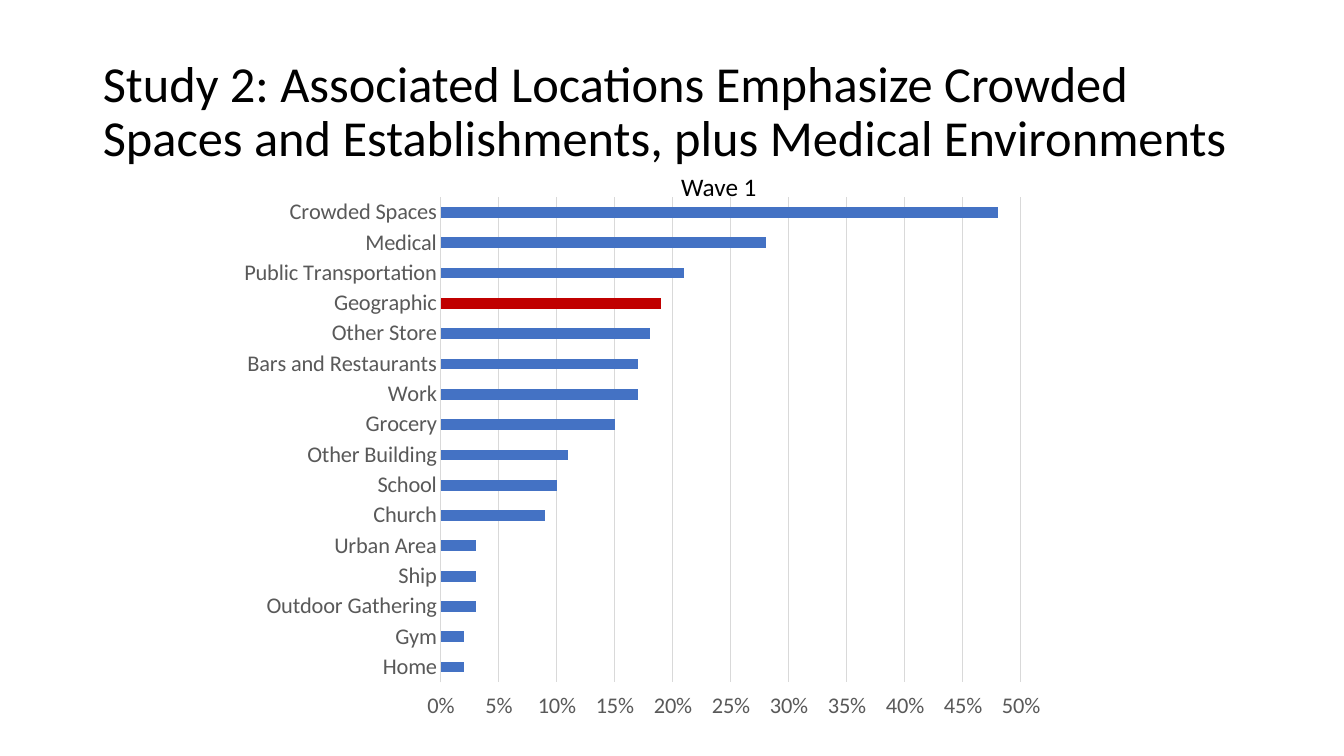
import pptx
import pptx.chart.data
import pptx.dml.color
import pptx.enum.chart
import pptx.enum.text
import pptx.oxml
import pptx.util
from pptx.util import Inches

COLORS = {"text": "000000", "axis": "595959", "grid": "D9D9D9",
          "bar": "4472C4", "highlight": "C00000"}
LOCATIONS = {
    "Crowded Spaces": 0.48, "Medical": 0.28, "Public Transportation": 0.21,
    "Geographic": 0.19, "Other Store": 0.18, "Bars and Restaurants": 0.17,
    "Work": 0.17, "Grocery": 0.15, "Other Building": 0.11, "School": 0.1,
    "Church": 0.09, "Urban Area": 0.03, "Ship": 0.03,
    "Outdoor Gathering": 0.03, "Gym": 0.02, "Home": 0.02,
}
PLOT_LAYOUT = {"x": 0.257, "y": 0.02, "w": 0.7, "h": 0.903}


def rgb(name):
    return pptx.dml.color.RGBColor.from_string(COLORS[name])


def format_font(font, size, color):
    values = {"name": "Calibri", "size": pptx.util.Pt(size), "bold": False}
    for attribute, value in values.items():
        setattr(font, attribute, value)
    font.color.rgb = rgb(color)


presentation = pptx.Presentation()
presentation.slide_width = Inches(13.33)
presentation.slide_height = Inches(7.5)
slide = presentation.slides.add_slide(presentation.slide_layouts[5])

# Title
title = slide.shapes.title
title.left, title.top = Inches(0.92), Inches(0.4)
title.width, title.height = Inches(11.5), Inches(1.45)
title_frame = title.text_frame
title_frame.text = ("Study 2: Associated Locations Emphasize Crowded Spaces "
                    "and Establishments, plus Medical Environments")
title_frame.word_wrap = True
title_frame.auto_size = pptx.enum.text.MSO_AUTO_SIZE.NONE
title_frame.vertical_anchor = pptx.enum.text.MSO_ANCHOR.MIDDLE
title_paragraph = title_frame.paragraphs[0]
title_paragraph.alignment = pptx.enum.text.PP_ALIGN.LEFT
title_paragraph.line_spacing = 0.9
format_font(title_paragraph.runs[0].font, 36, "text")

# Bar chart of locations
chart_data = pptx.chart.data.CategoryChartData(number_format="0%")
chart_data.categories = list(LOCATIONS)
chart_data.add_series("Series 1", list(LOCATIONS.values()))
chart = slide.shapes.add_chart(
    pptx.enum.chart.XL_CHART_TYPE.BAR_CLUSTERED, Inches(2.26), Inches(1.85),
    Inches(8.22), Inches(5.33), chart_data).chart
chart.has_legend = False
chart.has_title = False
format_font(chart.font, 16, "text")

plot = chart.plots[0]
plot.gap_width = 182
plot.vary_by_categories = False
series = plot.series[0]
highlight = series.points[list(LOCATIONS).index("Geographic")]
for bar, color in ((series, "bar"), (highlight, "highlight")):
    bar.format.fill.solid()
    bar.format.fill.fore_color.rgb = rgb(color)

# Axes: categories run downwards, percentages stay at the bottom
category_axis, value_axis = chart.category_axis, chart.value_axis
for axis in (category_axis, value_axis):
    axis.major_tick_mark = pptx.enum.chart.XL_TICK_MARK.NONE
    axis.minor_tick_mark = pptx.enum.chart.XL_TICK_MARK.NONE
    format_font(axis.tick_labels.font, 16, "axis")
category_axis.reverse_order = True
value_axis.tick_label_position = pptx.enum.chart.XL_TICK_LABEL_POSITION.HIGH
value_axis.minimum_scale = 0
value_axis.maximum_scale = 0.5
value_axis.major_unit = 0.05
value_axis.tick_labels.number_format = "0%"
value_axis.tick_labels.number_format_is_linked = False
value_axis.format.line.fill.background()
value_axis.has_major_gridlines = True
for line in (category_axis.format.line, value_axis.major_gridlines.format.line):
    line.color.rgb = rgb("grid")
    line.width = pptx.util.Pt(0.75)

# Fixed inner plot area
plot_area = chart.element.find(".//{*}plotArea")
for old_layout in plot_area.findall("{*}layout"):
    plot_area.remove(old_layout)
modes = '<c:xMode val="edge"/><c:yMode val="edge"/>'
sizes = "".join(f'<c:{key} val="{value}"/>' for key, value in PLOT_LAYOUT.items())
plot_area.insert(0, pptx.oxml.parse_xml(
    '<c:layout xmlns:c="http://schemas.openxmlformats.org/drawingml/2006/chart">'
    f'<c:manualLayout><c:layoutTarget val="inner"/>{modes}{sizes}'
    '</c:manualLayout></c:layout>'))

# Wave label
wave_label = slide.shapes.add_textbox(Inches(6.08), Inches(1.65), Inches(2.1), Inches(0.4))
wave_frame = wave_label.text_frame
wave_frame.word_wrap = True
wave_frame.auto_size = pptx.enum.text.MSO_AUTO_SIZE.SHAPE_TO_FIT_TEXT
wave_frame.text = "Wave 1"
wave_paragraph = wave_frame.paragraphs[0]
wave_paragraph.alignment = pptx.enum.text.PP_ALIGN.CENTER
format_font(wave_paragraph.runs[0].font, 18, "text")

presentation.save("out.pptx")
